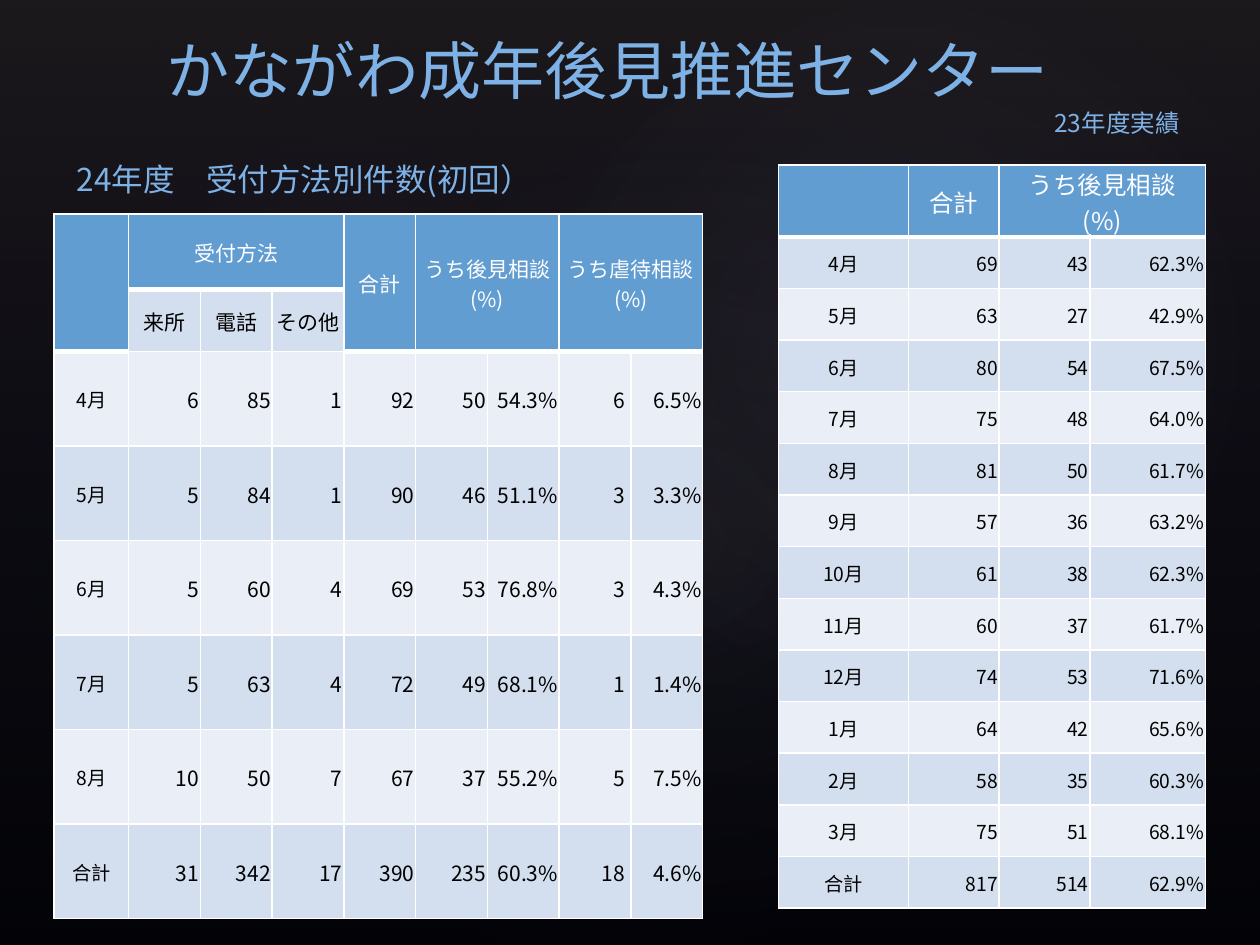
from pptx import Presentation
from pptx.dml.color import RGBColor
from pptx.enum.shapes import MSO_SHAPE
from pptx.enum.text import MSO_ANCHOR, PP_ALIGN
from pptx.oxml import parse_xml
from pptx.util import Inches, Pt

RECT, OVAL = MSO_SHAPE.RECTANGLE, MSO_SHAPE.OVAL
MIDDLE, BOTTOM = MSO_ANCHOR.MIDDLE, MSO_ANCHOR.BOTTOM
CENTER, RIGHT = PP_ALIGN.CENTER, PP_ALIGN.RIGHT
NS = 'xmlns:a="http://schemas.openxmlformats.org/drawingml/2006/main"'

GLOWS = [
    (1.5, 1.14, 7.92, 6.24, 328.7, 7),
    (-0.3, 1.28, 6.06, 4.9, 294.3, 8),
    (3.58, 0.13, 7.09, 5.2, 328.7, 8),
]

RESULTS_23 = [
    [None, "合計", "うち後見相談\v(%)", None],
    ["4月", "69", "43", "62.3%"],
    ["5月", "63", "27", "42.9%"],
    ["6月", "80", "54", "67.5%"],
    ["7月", "75", "48", "64.0%"],
    ["8月", "81", "50", "61.7%"],
    ["9月", "57", "36", "63.2%"],
    ["10月", "61", "38", "62.3%"],
    ["11月", "60", "37", "61.7%"],
    ["12月", "74", "53", "71.6%"],
    ["1月", "64", "42", "65.6%"],
    ["2月", "58", "35", "60.3%"],
    ["3月", "75", "51", "68.1%"],
    ["合計", "817", "514", "62.9%"],
]

RECEPTION_24 = [
    [None, "受付方法", None, None, "合計", "うち後見相談\v(%)", None, "うち虐待相談\v(%)", None],
    [None, "来所", "電話", "その他", None, None, None, None, None],
    ["4月", "6", "85", "1", "92", "50", "54.3%", "6 ", "6.5%"],
    ["5月", "5", "84", "1", "90", "46", "51.1%", "3 ", "3.3%"],
    ["6月", "5", "60", "4", "69", "53", "76.8%", "3 ", "4.3%"],
    ["7月", "5", "63", "4", "72", "49", "68.1%", "1 ", "1.4%"],
    ["8月", "10", "50", "7", "67", "37", "55.2%", "5 ", "7.5%"],
    ["合計", "31", "342", "17", "390", "235", "60.3%", "18 ", "4.6%"],
]


def rgb(color):
    return RGBColor.from_string(color)


class Deck:
    font = "Noto Sans CJK JP"
    accent, header, white, black = "7EB2E6", "629DD1", "FFFFFF", "000000"
    bands = ("EAEFF7", "D3DFEE")

    def __init__(self):
        self.prs = Presentation()
        self.prs.slide_width, self.prs.slide_height = Inches(10), Inches(7.5)
        self.s = self.prs.slides.add_slide(self.prs.slide_layouts[6])
        fill = self.s.background.fill
        fill.solid()
        fill.fore_color.rgb = rgb(self.black)

    def style(self, p, size, color, align=None):
        p.alignment = align
        for r in p.runs:
            r.font.size = Pt(size)
            r.font.name = self.font
            r.font.color.rgb = rgb(color)
            r.font._element.append(parse_xml(f'<a:ea {NS} typeface="{self.font}"/>'))

    def gradient(self, kind, x, y, w, h, stops, direction, rotation=0):
        sp = self.s.shapes.add_shape(kind, Inches(x), Inches(y), Inches(w), Inches(h))
        sp.rotation = rotation
        sp.shadow.inherit = False
        sp.line.fill.background()
        gs = "".join(
            f'<a:gs pos="{pos * 1000}"><a:srgbClr val="{color}">'
            f'<a:alpha val="{alpha * 1000}"/></a:srgbClr></a:gs>'
            for pos, color, alpha in stops
        )
        sp._element.spPr.insert(2, parse_xml(
            f'<a:gradFill {NS} rotWithShape="1"><a:gsLst>{gs}</a:gsLst>{direction}</a:gradFill>'))

    def text(self, x, y, w, h, text, size):
        tf = self.s.shapes.add_textbox(Inches(x), Inches(y), Inches(w), Inches(h)).text_frame
        tf.word_wrap = True
        tf.vertical_anchor = BOTTOM
        tf.text = text
        self.style(tf.paragraphs[0], size, self.accent)

    def border(self, cell, sides):
        tcPr = cell._tc.get_or_add_tcPr()
        for i, (side, width) in enumerate(sides.items()):
            tcPr.insert(i, parse_xml(
                f'<a:ln{side} {NS} w="{Pt(width)}"><a:solidFill>'
                f'<a:srgbClr val="{self.white}"/></a:solidFill></a:ln{side}>'))

    def table(self, x, y, widths, heights, rows, merges, header_rows, header_size, body_size):
        table = self.s.shapes.add_table(
            len(rows), len(widths), Inches(x), Inches(y),
            Inches(sum(widths)), Inches(sum(heights))).table
        for column, width in zip(table.columns, widths):
            column.width = Inches(width)
        for row, height in zip(table.rows, heights):
            row.height = Inches(height)
        for top, left, bottom, right in merges:
            table.cell(top, left).merge(table.cell(bottom, right))
        for i, row in enumerate(rows):
            for j, value in enumerate(row):
                cell = table.cell(i, j)
                is_header = i == 0 or cell.is_spanned
                cell.fill.solid()
                cell.fill.fore_color.rgb = rgb(self.header if is_header else self.bands[i % 2])
                sides = {"L": 1, "R": 1}
                if i == 0:
                    sides["T"] = 1
                sides["B"] = 3 if is_header else 1
                self.border(cell, sides)
                cell.margin_left = cell.margin_right = cell.margin_top = Inches(0.01)
                cell.margin_bottom = 0
                cell.vertical_anchor = MIDDLE
                if value is None:
                    continue
                cell.text_frame.text = value
                in_header = i < header_rows
                size = header_size if in_header else 11 if j == 0 else body_size
                self.style(cell.text_frame.paragraphs[0], size,
                           self.white if is_header else self.black,
                           CENTER if in_header or j == 0 else RIGHT)


def main():
    deck = Deck()
    deck.gradient(RECT, 0, 0, 10, 7.5, [(0, "504652", 36), (100, "242852", 10)],
                  '<a:lin ang="5400000" scaled="0"/>')
    for x, y, w, h, rotation, alpha in GLOWS:
        deck.gradient(OVAL, x, y, w, h, [(0, "C4BCC6", alpha), (58, "242852", 0)],
                      '<a:path path="circle"><a:fillToRect l="50000" t="50000" '
                      'r="50000" b="50000"/></a:path>', rotation)
    deck.text(1.22, 0.21, 7.77, 0.69, "かながわ成年後見推進センター", 36)
    deck.table(6.18, 1.31, [1.03, 0.72, 0.72, 0.92], [0.57] + [0.41] * 13, RESULTS_23,
               [(0, 2, 0, 3)], 1, 14, 11)
    deck.table(0.43, 1.7, [0.59] + [0.57] * 8, [0.6, 0.49] + [0.75] * 6, RECEPTION_24,
               [(0, 0, 1, 0), (0, 1, 0, 3), (0, 4, 1, 4), (0, 5, 1, 6), (0, 7, 1, 8)],
               2, 12, 12)
    deck.text(8.27, 0.76, 1.73, 0.38, "23年度実績", 14)
    deck.text(0.51, 1.15, 4.17, 0.47, "24年度　受付方法別件数(初回）", 18)
    deck.prs.save("out.pptx")


if __name__ == "__main__":
    main()
